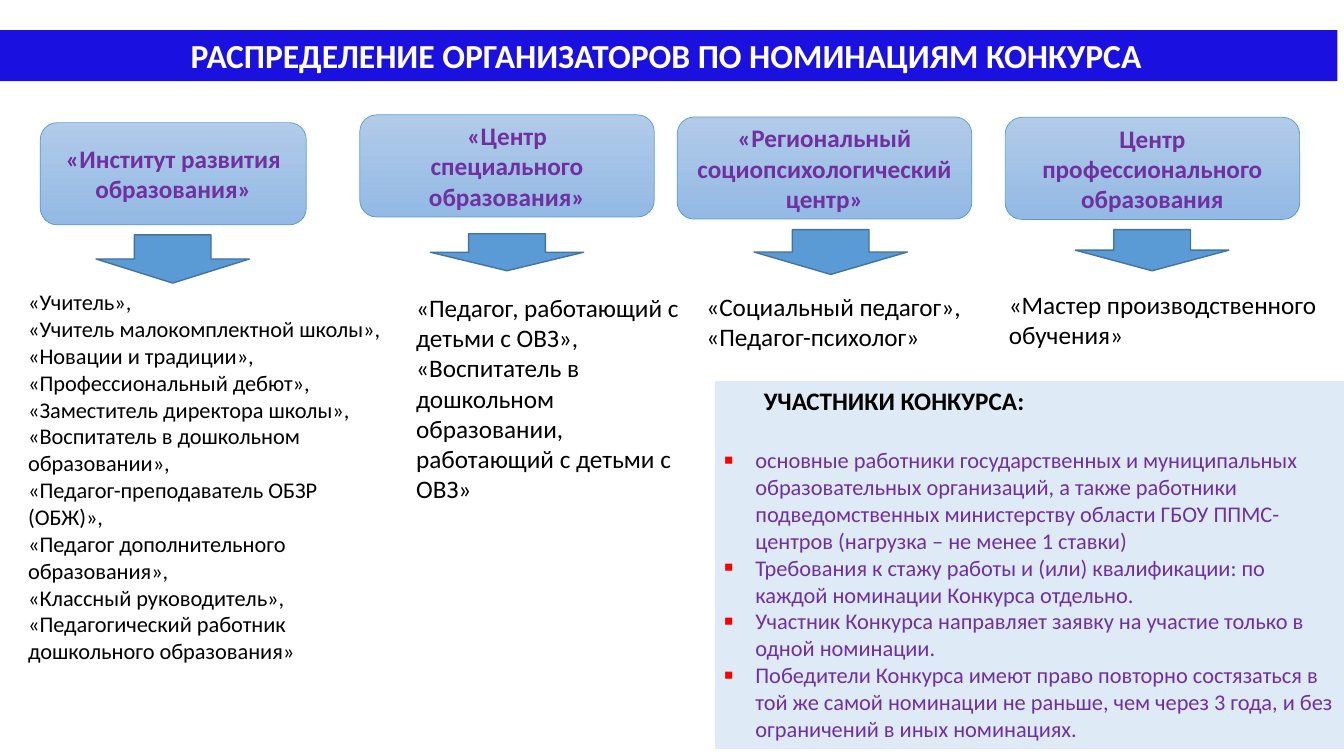
"""Build the slide on how organisers share the contest nominations."""
from dataclasses import dataclass

from lxml import etree
from pptx import Presentation
from pptx import util as u
from pptx.dml import color
from pptx.enum import shapes, text
from pptx.oxml import ns

Pt = u.Pt
FORM = shapes.MSO_SHAPE
MID = text.PP_ALIGN.CENTER
LEFT = text.PP_ALIGN.LEFT
TOP = text.MSO_ANCHOR.TOP
CORE = text.MSO_ANCHOR.MIDDLE


@dataclass
class Area:
    left: float
    top: float
    width: float
    height: float


@dataclass
class Column:
    head: list[str]
    box: Area
    arrow: Area
    body: list[str]
    list_area: Area
    size: int = 18


COLUMNS = [
    Column(["«Институт развития образования»"],
           Area(28.8, 87.6, 190, 73), Area(68.6, 167.8, 109.6, 34.4),
           ["«Учитель»,",
            "«Учитель малокомплектной школы»,",
            "«Новации и традиции», «Профессиональный дебют», "
            "«Заместитель директора школы», «Воспитатель в дошкольном образовании»,",
            "«Педагог-преподаватель ОБЗР (ОБЖ)»,",
            "«Педагог дополнительного образования»,",
            "«Классный руководитель», «Педагогический работник дошкольного образования»"],
           Area(13, 202.3, 269.3, 278.6), 16),
    Column(["«Центр", "специального", "образования»"],
           Area(257, 82, 210.4, 73), Area(307.4, 167, 109.6, 26.4),
           ["«Педагог, работающий с детьми с ОВЗ»,",
            "«Воспитатель в дошкольном образовании, работающий с детьми с ОВЗ»"],
           Area(290.2, 205.2, 208, 160)),
    Column(["«Региональный социопсихологический центр»"],
           Area(483.8, 83.5, 210.4, 73), Area(538.6, 164, 109.6, 32),
           ["«Социальный педагог»,", "«Педагог-психолог»"],
           Area(497.5, 204.3, 222.5, 51)),
    Column(["Центр", "профессионального", "образования"],
           Area(718, 83.8, 210.4, 73), Area(768.2, 164, 109.6, 29.4),
           ["«Мастер производственного обучения»"],
           Area(713.5, 203.2, 242, 51)),
]

RULES = [
    "основные работники государственных и муниципальных образовательных "
    "организаций, а также работники подведомственных министерству области "
    "ГБОУ ППМС-центров (нагрузка – не менее 1 ставки)",
    "Требования к стажу работы и (или) квалификации: по каждой номинации "
    "Конкурса отдельно.",
    "Участник Конкурса направляет заявку на участие только в одной номинации.",
    "Победители Конкурса имеют право повторно состязаться в той же самой "
    "номинации не раньше, чем через 3 года, и без ограничений в иных номинациях.",
]


def hue(code: str) -> color.RGBColor:
    """Turn a hex string into a colour."""
    return color.RGBColor.from_string(code)


def place(area: Area) -> list[int]:
    """Give the four lengths of an area."""
    return [Pt(n) for n in (area.left, area.top, area.width, area.height)]


def style(target, values: dict) -> None:
    """Set each named value on the target."""
    for name, value in values.items():
        setattr(target, name, value)


def write(shape, lines: list[str], size: int, ink: str, bold: bool = False,
          align=LEFT, anchor=TOP) -> list:
    """Fill a shape with paragraphs and return them."""
    frame = shape.text_frame
    style(frame, {"text": "\n".join(lines), "word_wrap": True, "vertical_anchor": anchor})
    for para in frame.paragraphs:
        para.alignment = align
        tint(para, size, ink, bold)
    return list(frame.paragraphs)


def tint(para, size: int, ink: str, bold: bool) -> None:
    """Format the runs of a paragraph."""
    for run in para.runs:
        style(run.font, {"name": "Calibri", "size": Pt(size), "bold": bold})
        run.font.color.rgb = hue(ink)


def block(slide, form, area: Area, fills: list[str], edge: str = "", width: float = 1):
    """Draw a shape with a flat fill or a downward blend of two colours."""
    shape = slide.shapes.add_shape(form, *place(area))
    shape.shadow.inherit = False
    if len(fills) == 1:
        shape.fill.solid()
        shape.fill.fore_color.rgb = hue(fills[0])
    else:
        shape.fill.gradient()
        shape.fill.gradient_angle = 270
        for stop, code in zip(shape.fill.gradient_stops, fills):
            stop.color.rgb = hue(code)
    if edge:
        shape.line.color.rgb = hue(edge)
        shape.line.width = Pt(width)
    else:
        shape.line.fill.background()
    return shape


def bullet(para) -> None:
    """Give a paragraph a red square bullet and a hanging indent."""
    props = para._p.get_or_add_pPr()
    props.set("marL", str(Pt(22.5)))
    props.set("indent", str(-Pt(22.5)))
    shade = etree.SubElement(props, ns.qn("a:buClr"))
    etree.SubElement(shade, ns.qn("a:srgbClr"), val="FF0000")
    etree.SubElement(props, ns.qn("a:buSzPct"), val="124000")
    etree.SubElement(props, ns.qn("a:buFont"), typeface="Calibri")
    etree.SubElement(props, ns.qn("a:buChar"), char="▪")


def panel(slide) -> None:
    """Draw the panel on who may take part."""
    shape = block(slide, FORM.RECTANGLE, Area(510, 271.7, 452, 264.2), ["DEEBF7"], "FFFFFF")
    title, *rules = write(shape, ["УЧАСТНИКИ КОНКУРСА:", *RULES], 16, "7030A0")
    tint(title, 18, "000000", True)
    title.space_after = Pt(22)
    title._p.get_or_add_pPr().set("marL", str(Pt(28.5)))
    for rule in rules:
        bullet(rule)


def column(slide, col: Column) -> None:
    """Draw one organiser, its arrow and its nominations."""
    note = slide.shapes.add_textbox(*place(col.list_area))
    write(note, col.body, col.size, "000000")
    block(slide, FORM.DOWN_ARROW, col.arrow, ["5B9BD5"], "43739E")
    box = block(slide, FORM.ROUNDED_RECTANGLE, col.box, ["B1CBE9", "93B9E4"], "5B9BD5", 0.5)
    write(box, col.head, 18, "7030A0", True, MID, CORE)


def main() -> None:
    """Build and save the deck."""
    deck = Presentation()
    style(deck, {"slide_width": Pt(960), "slide_height": Pt(540)})
    slide = deck.slides.add_slide(deck.slide_layouts[6])
    panel(slide)
    band = block(slide, FORM.RECTANGLE, Area(-3.6, 21.6, 959, 36.3), ["1A10E0"])
    write(band, ["РАСПРЕДЕЛЕНИЕ ОРГАНИЗАТОРОВ ПО НОМИНАЦИЯМ КОНКУРСА"],
          24, "FFFFFF", True, MID)
    for col in COLUMNS:
        column(slide, col)
    deck.save("out.pptx")


if __name__ == "__main__":
    main()
